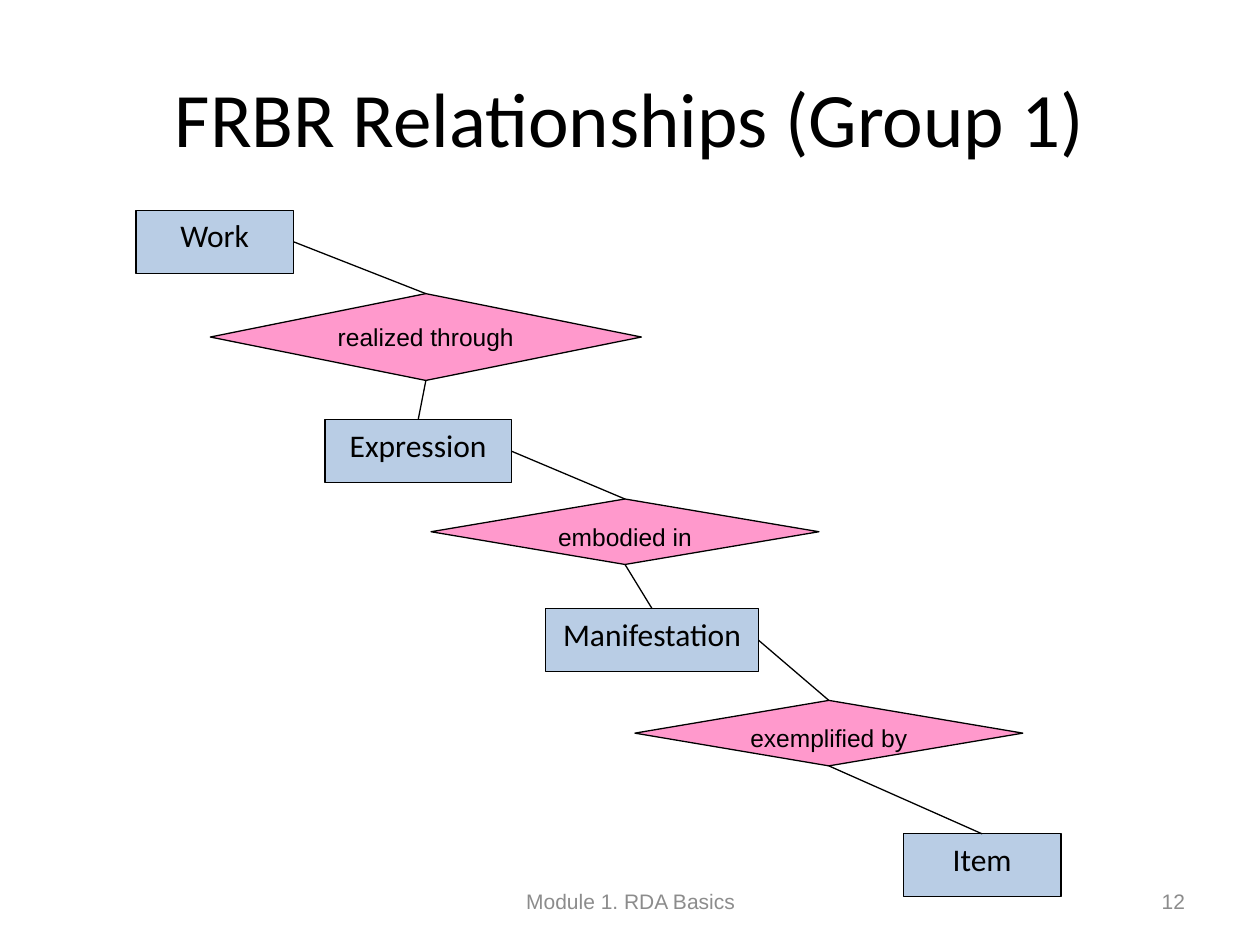
from dataclasses import dataclass

from lxml import etree
from pptx import Presentation
from pptx.dml.color import RGBColor
from pptx.enum.shapes import MSO_CONNECTOR, MSO_SHAPE
from pptx.enum.text import MSO_ANCHOR, PP_ALIGN
from pptx.oxml.ns import qn
from pptx.util import Cm, Pt

RECTANGLE = MSO_SHAPE.RECTANGLE
DIAMOND = MSO_SHAPE.FLOWCHART_DECISION
STRAIGHT = MSO_CONNECTOR.STRAIGHT
TOP, MIDDLE = MSO_ANCHOR.TOP, MSO_ANCHOR.MIDDLE
CENTER, RIGHT = PP_ALIGN.CENTER, PP_ALIGN.RIGHT
TOP_SIDE, BOTTOM_SIDE, RIGHT_SIDE = 0, 2, 3
TITLE_ONLY = 5


@dataclass(frozen=True)
class Theme:
    ink: RGBColor = RGBColor(0x00, 0x00, 0x00)
    muted: RGBColor = RGBColor(0x8C, 0x8C, 0x8C)
    entity_fill: RGBColor = RGBColor(0xB9, 0xCD, 0xE5)
    relation_fill: RGBColor = RGBColor(0xFF, 0x99, 0xCC)
    heading_font: str = "Calibri"
    label_font: str = "Arial"
    title_size: Pt = Pt(44)
    entity_size: Pt = Pt(18)
    relation_size: Pt = Pt(14)
    footer_size: Pt = Pt(12)
    line_width: Pt = Pt(0.75)


THEME = Theme()

# Text, then left, top, width and height in centimetres
ENTITIES = [
    ("Work", (2.74, 4.24, 3.18, 1.27)),
    ("Expression", (6.55, 8.46, 3.76, 1.27)),
    ("Manifestation", (11, 12.27, 4.29, 1.27)),
    ("Item", (18.21, 16.81, 3.18, 1.27)),
]
RELATIONS = [
    ("realized through", (4.24, 5.92, 8.69, 1.75)),
    ("embodied in", (8.69, 10.06, 7.82, 1.32)),
    ("exemplified by", (12.8, 14.12, 7.82, 1.32)),
]
FOOTERS = [
    ("Module 1. RDA Basics", (8.69, 17.65, 8.05, 1.02), CENTER),
    ("12", (18.21, 17.65, 5.93, 1.02), RIGHT),
]


def lengths(box):
    return [Cm(value) for value in box]


def write_text(shape, text, font, alignment=CENTER, anchor=TOP):
    frame = shape.text_frame
    frame.word_wrap = True
    frame.vertical_anchor = anchor
    paragraph = frame.paragraphs[0]
    paragraph.alignment = alignment
    run = paragraph.add_run()
    run.text = text
    for name, value in font.items():
        if name == "color":
            run.font.color.rgb = value
        else:
            setattr(run.font, name, value)
    return paragraph


def add_title(slide, text):
    title = slide.shapes.title
    title.left, title.top, title.width, title.height = lengths((1.27, 0.76, 22.86, 3.18))
    font = {"name": THEME.heading_font, "size": THEME.title_size, "color": THEME.ink}
    write_text(title, text, font, anchor=MIDDLE)


def add_node(slide, kind, box, text, fill, font, space_after=Pt(0)):
    shape = slide.shapes.add_shape(kind, *lengths(box))
    shape.shadow.inherit = False
    shape.fill.solid()
    shape.fill.fore_color.rgb = fill
    shape.line.color.rgb = THEME.ink
    shape.line.width = THEME.line_width
    write_text(shape, text, font).space_after = space_after
    return shape


def join(slide, start, start_side, end):
    """Draw a line from a side of start to the top of end."""
    connector = slide.shapes.add_connector(STRAIGHT, 0, 0, 0, 0)
    connector.begin_connect(start, start_side)
    connector.end_connect(end, TOP_SIDE)
    connector.line.color.rgb = THEME.ink
    connector.line.width = THEME.line_width
    etree.SubElement(connector._element.spPr, qn("a:effectLst"))


def add_footer(slide, text, box, alignment):
    footer = slide.shapes.add_textbox(*lengths(box))
    font = {"name": THEME.label_font, "size": THEME.footer_size, "color": THEME.muted}
    write_text(footer, text, font, alignment, MIDDLE)


def main():
    presentation = Presentation()
    presentation.slide_width, presentation.slide_height = Cm(25.4), Cm(19.05)
    slide = presentation.slides.add_slide(presentation.slide_layouts[TITLE_ONLY])
    add_title(slide, "FRBR Relationships (Group 1)")

    # Entities and the relationships between them
    entity_font = {"name": THEME.heading_font, "size": THEME.entity_size, "color": THEME.ink}
    relation_font = {"name": THEME.label_font, "size": THEME.relation_size, "color": THEME.ink}
    entities = [
        add_node(slide, RECTANGLE, box, text, THEME.entity_fill, entity_font, Pt(10))
        for text, box in ENTITIES
    ]
    relations = [
        add_node(slide, DIAMOND, box, text, THEME.relation_fill, relation_font)
        for text, box in RELATIONS
    ]

    # Each relationship links one entity to the next
    for source, relation, target in zip(entities, relations, entities[1:]):
        join(slide, source, RIGHT_SIDE, relation)
        join(slide, relation, BOTTOM_SIDE, target)

    # Footer and slide number
    for text, box, alignment in FOOTERS:
        add_footer(slide, text, box, alignment)

    presentation.save("out.pptx")


if __name__ == "__main__":
    main()
